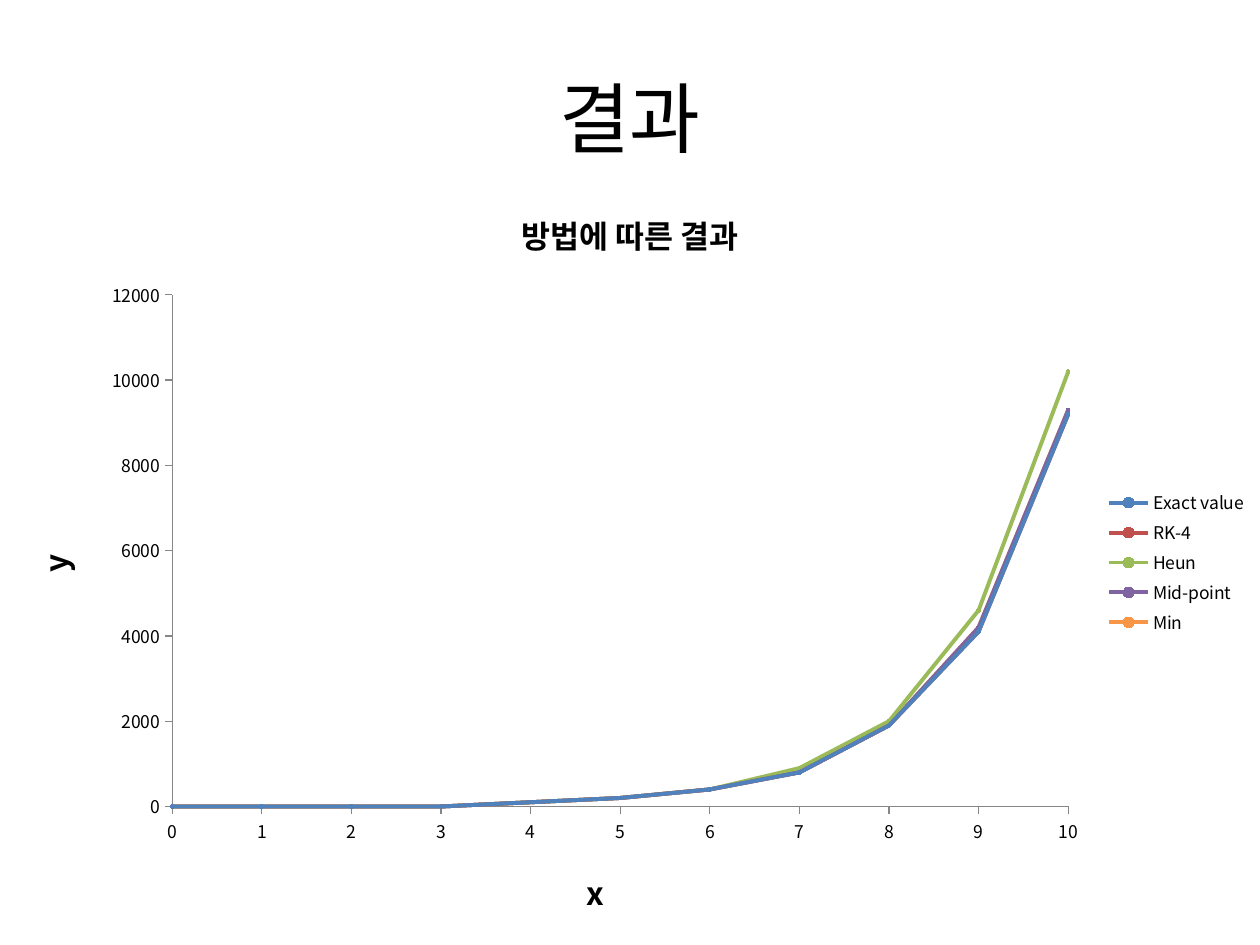
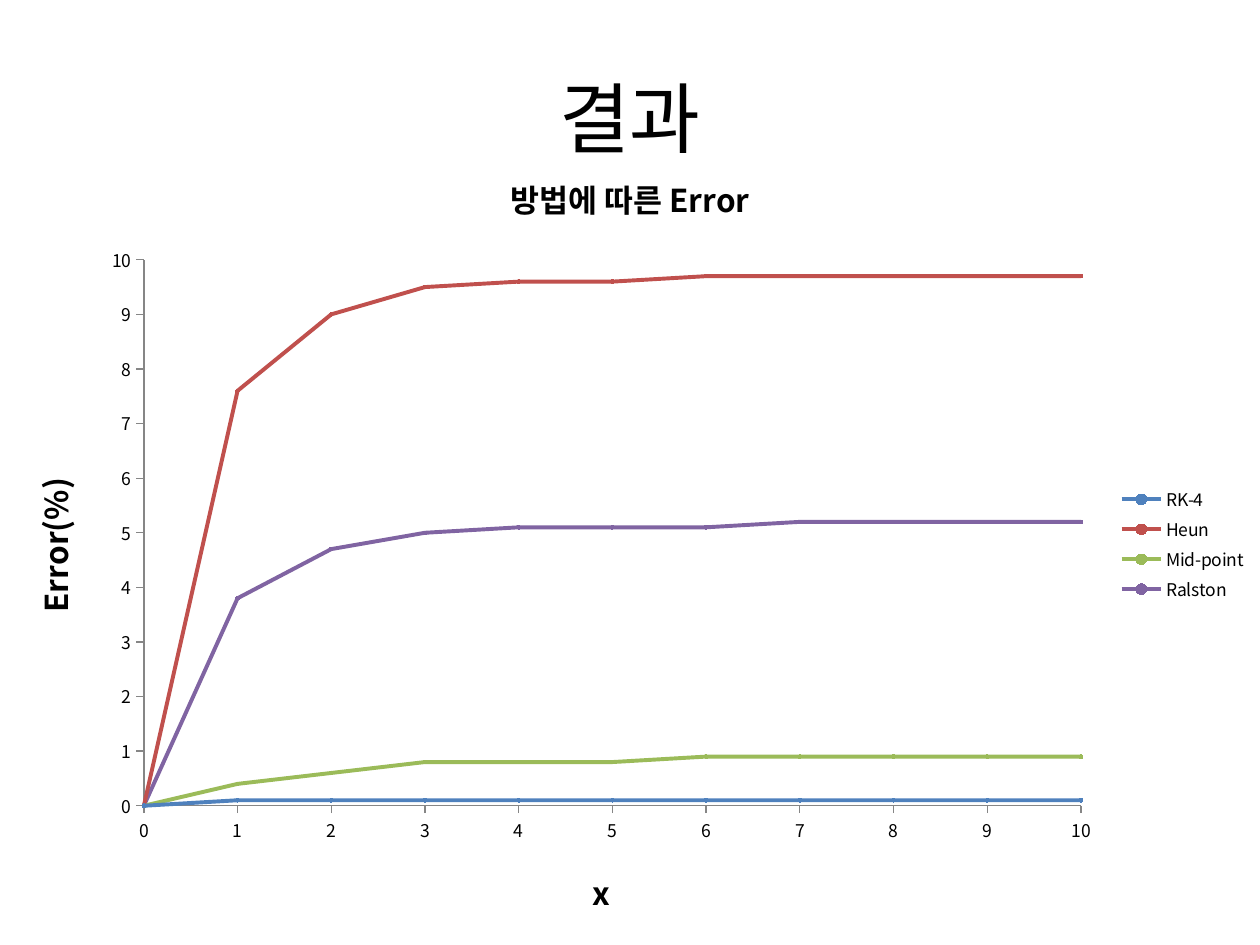
from pptx import Presentation
from pptx.chart.data import XyChartData
from pptx.dml.color import RGBColor
from pptx.enum.chart import XL_CHART_TYPE, XL_LEGEND_POSITION, XL_MARKER_STYLE, XL_TICK_MARK
from pptx.enum.text import MSO_ANCHOR, PP_ALIGN
from pptx.util import Inches, Pt

FONT = "Noto Sans CJK KR"
BLACK = "000000"
AXIS_GREY = "868686"
BLUE, RED, GREEN, PURPLE, ORANGE = "4F81BD", "C0504D", "9BBB59", "8064A2", "F79646"

SLIDE_WIDTH, SLIDE_HEIGHT = 10, 7.5
SLIDE_TITLE = "결과"
X_VALUES = range(11)
X_SCALE = (0, 10, 1)

RESULTS = [
    {
        "title": "방법에 따른 결과",
        "top": 1.43,
        "y_title": "y",
        "y_scale": (0, 12000, 2000),
        "series": [
            ("Exact value", BLUE, [0, 0, 0, 0, 100, 200, 400, 800, 1900, 4100, 9200]),
            ("RK-4", RED, [0, 0, 0, 0, 100, 200, 400, 800, 1900, 4100, 9200]),
            ("Heun", GREEN, [0, 0, 0, 0, 100, 200, 400, 900, 2000, 4600, 10200]),
            ("Mid-point", PURPLE, [0, 0, 0, 0, 100, 200, 400, 800, 1900, 4200, 9300]),
            ("Min", ORANGE, [0, 0, 0, 0, 100, 200, 400, 800, 1900, 4200, 9300]),
        ],
    },
    {
        "title": "방법에 따른 Error",
        "top": 1.14,
        "y_title": "Error(%)",
        "y_scale": (0, 10, 1),
        "series": [
            ("RK-4", BLUE, [0, 0.1, 0.1, 0.1, 0.1, 0.1, 0.1, 0.1, 0.1, 0.1, 0.1]),
            ("Heun", RED, [0, 7.6, 9, 9.5, 9.6, 9.6, 9.7, 9.7, 9.7, 9.7, 9.7]),
            ("Mid-point", GREEN, [0, 0.4, 0.6, 0.8, 0.8, 0.8, 0.9, 0.9, 0.9, 0.9, 0.9]),
            ("Ralston", PURPLE, [0, 3.8, 4.7, 5, 5.1, 5.1, 5.1, 5.2, 5.2, 5.2, 5.2]),
        ],
    },
]


def color(hex_code):
    return RGBColor.from_string(hex_code)


def style_font(font, size, bold=False):
    font.name = FONT
    font.size = Pt(size)
    font.bold = bold
    font.color.rgb = color(BLACK)


def set_heading(text_frame, text, size, bold=False):
    text_frame.text = text
    para = text_frame.paragraphs[0]
    para.alignment = PP_ALIGN.CENTER
    style_font(para.runs[0].font, size, bold)


def add_title(slide):
    title = slide.shapes.title
    title.left, title.top = Inches(0.5), Inches(0.3)
    title.width, title.height = Inches(9), Inches(1.25)
    title.text_frame.vertical_anchor = MSO_ANCHOR.MIDDLE
    set_heading(title.text_frame, SLIDE_TITLE, 44)


def style_axis(axis, title, scale):
    axis.minimum_scale, axis.maximum_scale, axis.major_unit = scale
    axis.has_major_gridlines = False
    axis.major_tick_mark = XL_TICK_MARK.OUTSIDE
    axis.minor_tick_mark = XL_TICK_MARK.NONE
    axis.format.line.color.rgb = color(AXIS_GREY)
    axis.format.line.width = Pt(0.75)
    axis.tick_labels.number_format = "General"
    axis.tick_labels.number_format_is_linked = False
    set_heading(axis.axis_title.text_frame, title, 18, True)


def style_series(series, hex_code):
    series.smooth = False
    series.format.line.color.rgb = color(hex_code)
    series.format.line.width = Pt(2.25)
    marker = series.marker
    marker.style = XL_MARKER_STYLE.CIRCLE
    marker.size = 2
    marker.format.fill.solid()
    marker.format.fill.fore_color.rgb = color(hex_code)
    marker.format.line.color.rgb = color(hex_code)


def add_result_chart(slide, result):
    data = XyChartData()
    for name, _, values in result["series"]:
        points = data.add_series(name)
        for x, y in zip(X_VALUES, values):
            points.add_data_point(x, y)
    top = result["top"]
    chart = slide.shapes.add_chart(
        XL_CHART_TYPE.XY_SCATTER_LINES, 0, Inches(top),
        Inches(SLIDE_WIDTH), Inches(SLIDE_HEIGHT - top), data,
    ).chart
    style_font(chart.font, 10)
    chart.has_title = True
    set_heading(chart.chart_title.text_frame, result["title"], 18, True)
    chart.chart_title.include_in_layout = False
    chart.has_legend = True
    chart.legend.position = XL_LEGEND_POSITION.RIGHT
    chart.legend.include_in_layout = False
    style_axis(chart.category_axis, "x", X_SCALE)
    style_axis(chart.value_axis, result["y_title"], result["y_scale"])
    plot = chart.plots[0]
    plot.vary_by_categories = False
    for series, (_, hex_code, _) in zip(plot.series, result["series"]):
        style_series(series, hex_code)


def main():
    deck = Presentation()
    deck.slide_width, deck.slide_height = Inches(SLIDE_WIDTH), Inches(SLIDE_HEIGHT)
    for result in RESULTS:
        slide = deck.slides.add_slide(deck.slide_layouts[5])
        add_title(slide)
        add_result_chart(slide, result)
    deck.save("out.pptx")


if __name__ == "__main__":
    main()
